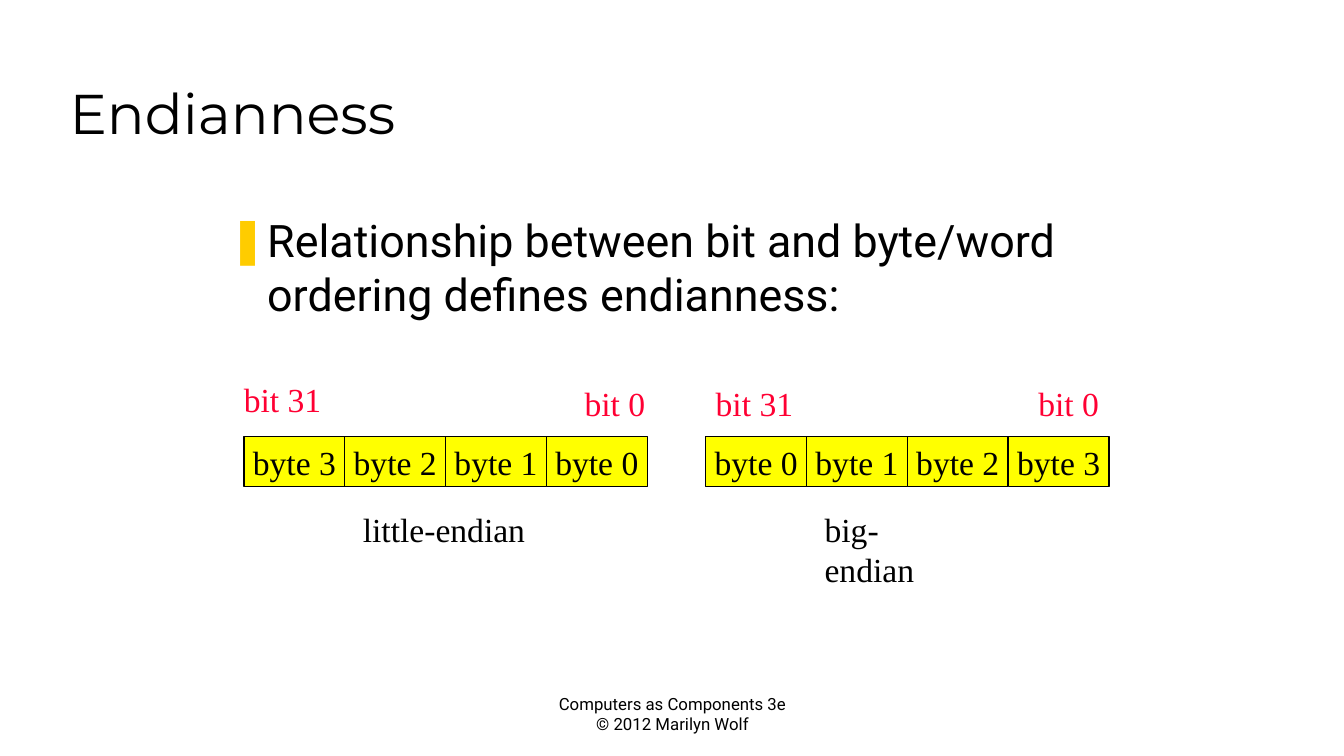
"""Build the Endianness slide comparing little-endian and big-endian byte order."""
import lxml.etree
import pptx
import pptx.dml.color
import pptx.enum.shapes
import pptx.enum.text
import pptx.oxml.ns
import pptx.util

Inches = pptx.util.Inches
Align = pptx.enum.text.PP_ALIGN
Anchor = pptx.enum.text.MSO_ANCHOR
AutoSize = pptx.enum.text.MSO_AUTO_SIZE
SERIF = "Times New Roman"


def color(value):
    return pptx.dml.color.RGBColor.from_string(value)


def write(shape, text, size, font, text_color="000000", align=Align.LEFT,
          anchor=Anchor.TOP, wrap=True, auto_size=AutoSize.NONE):
    frame = shape.text_frame
    frame.text = text
    frame.word_wrap = wrap
    frame.auto_size = auto_size
    frame.vertical_anchor = anchor
    for paragraph in frame.paragraphs:
        paragraph.alignment = align
        for run in paragraph.runs:
            run.font.size = pptx.util.Pt(size)
            run.font.name = font
            run.font.color.rgb = color(text_color)


presentation = pptx.Presentation()
presentation.slide_width = Inches(13.33)
presentation.slide_height = Inches(7.5)
slide = presentation.slides.add_slide(presentation.slide_layouts[1])
shapes = slide.shapes

title = shapes.title
title.left, title.top, title.width, title.height = map(Inches, (0.59, 0.25, 11.33, 1.25))
write(title, "Endianness", 40, "Montserrat", anchor=Anchor.BOTTOM)

body = slide.placeholders[1]
body.left, body.top, body.width, body.height = map(Inches, (2.17, 2.06, 8.94, 1.27))
write(body, "Relationship between bit and byte/word ordering defines endianness:", 32, "Roboto")
paragraph = body.text_frame.paragraphs[0]
paragraph.space_before = pptx.util.Pt(0)
properties = paragraph._p.get_or_add_pPr()
properties.set("marL", str(Inches(0.38)))
properties.set("indent", str(-Inches(0.38)))
qn = pptx.oxml.ns.qn
bullet_color = lxml.etree.SubElement(properties, qn("a:buClr"))
lxml.etree.SubElement(bullet_color, qn("a:srgbClr"), val="FFCC00")
lxml.etree.SubElement(properties, qn("a:buChar"), char="❚")

for word_left, byte_order in ((2.42, (3, 2, 1, 0)), (7, (0, 1, 2, 3))):
    for column, byte in enumerate(byte_order):
        cell = shapes.add_shape(pptx.enum.shapes.MSO_SHAPE.RECTANGLE,
                                Inches(word_left + column), Inches(4.33), Inches(1), Inches(0.5))
        cell.shadow.inherit = False
        cell.fill.solid()
        cell.fill.fore_color.rgb = color("FFFF00")
        cell.line.color.rgb = color("000000")
        cell.line.width = pptx.util.Pt(1)
        write(cell, f"byte {byte}", 24, SERIF, align=Align.CENTER,
              anchor=Anchor.MIDDLE, wrap=False)

labels = (
    ("bit 31", 2.32, 3.71, 0.97, "FF0033"),
    ("bit 0", 5.7, 3.75, 0.8, "FF0033"),
    ("bit 31", 7, 3.75, 0.97, "FF0033"),
    ("bit 0", 10.2, 3.75, 0.8, "FF0033"),
    ("little-endian", 3.5, 5, 1.81, "000000"),
    ("big-endian", 8.08, 5, 1.62, "000000"),
)
for text, left, top, width, label_color in labels:
    label = shapes.add_textbox(Inches(left), Inches(top), Inches(width), Inches(0.5))
    write(label, text, 24, SERIF, label_color, wrap=False,
          auto_size=AutoSize.SHAPE_TO_FIT_TEXT)

footer = shapes.add_textbox(Inches(4.89), Inches(6.83), Inches(3.56), Inches(0.5))
write(footer, "Computers as Components 3e\n© 2012 Marilyn Wolf", 12, "Roboto",
      align=Align.CENTER, auto_size=AutoSize.SHAPE_TO_FIT_TEXT)

presentation.save("out.pptx")
